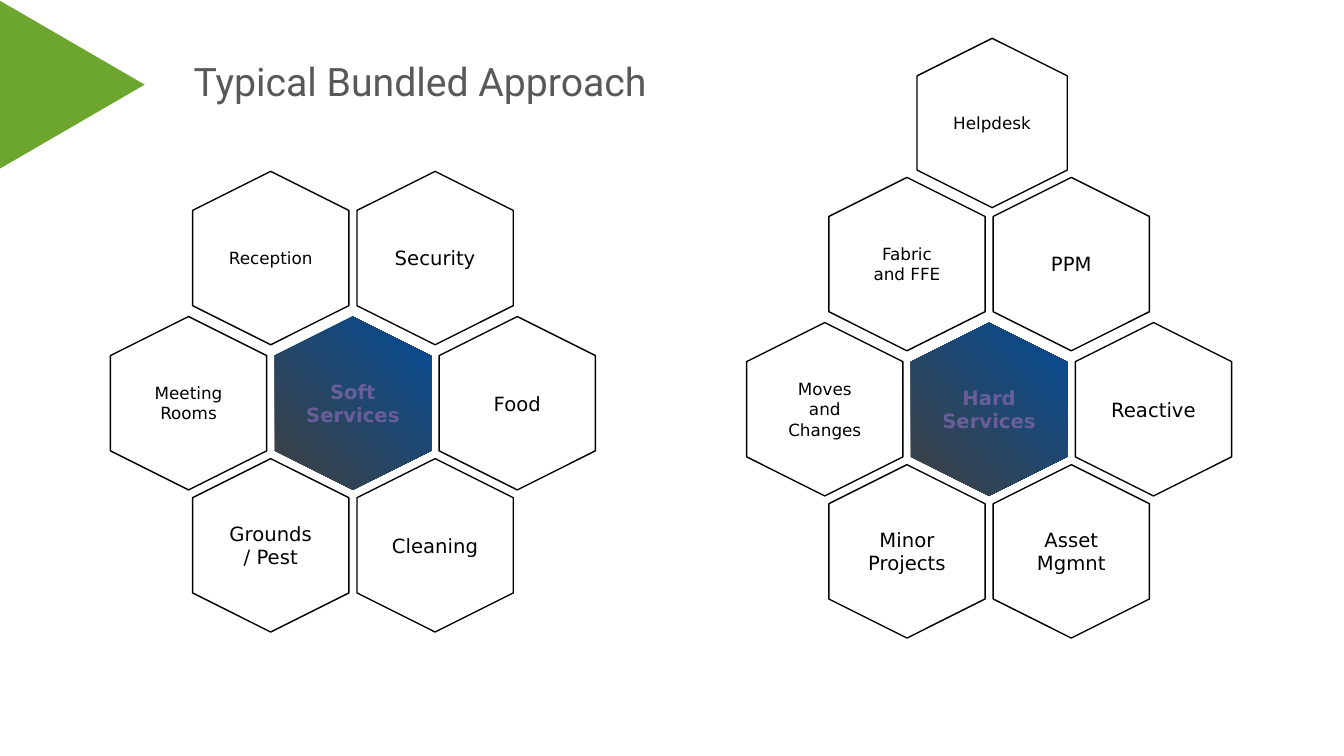
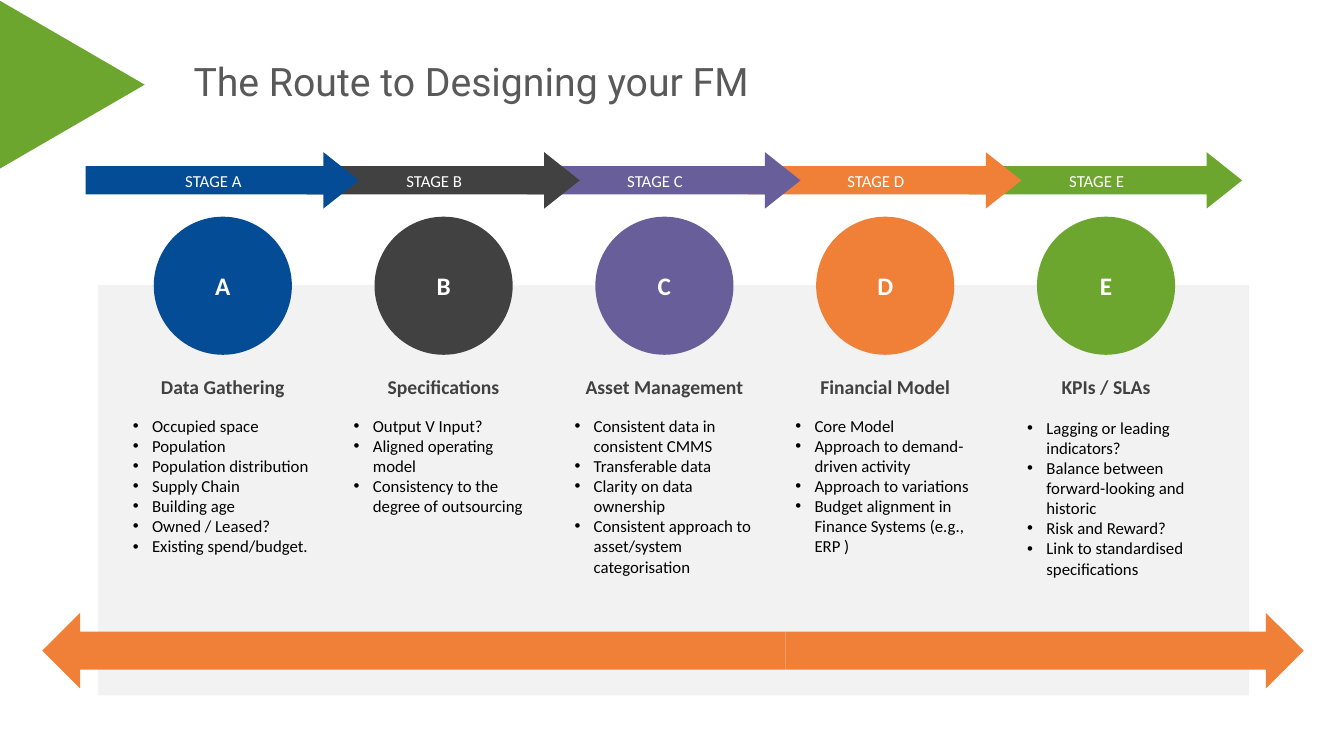
from lxml.etree import SubElement
from pptx import Presentation
from pptx.dml.color import RGBColor
from pptx.enum.shapes import MSO_SHAPE
from pptx.enum.text import MSO_ANCHOR, PP_ALIGN
from pptx.oxml.ns import qn
from pptx.util import Inches, Pt

BLUE, DARK, PURPLE, ORANGE, GREEN = "044C95", "404140", "685F9A", "F08038", "6DA62E"
BLACK, WHITE, GREY, PALE = "000000", "FFFFFF", "595959", "F2F2F2"


def rgb(code):
    return RGBColor.from_string(code)


class Deck:
    """Holds the style, the presentation and the current slide."""
    head, body, label = "Roboto", "Calibri", "DejaVu Sans"

    def __init__(self):
        self.prs = Presentation()
        self.prs.slide_width, self.prs.slide_height = Inches(13.33), Inches(7.5)
        self.slide = None

    def page(self, title):
        self.slide = self.prs.slides.add_slide(self.prs.slide_layouts[6])
        mark = self.shape(MSO_SHAPE.ISOSCELES_TRIANGLE, -0.12, 0.12, 1.67, 1.44, GREEN)
        mark.rotation = 90
        box = self.text(title, 1.92, 0.62, 8.68, 0.42, 28, GREY, font=self.head,
                        align=PP_ALIGN.LEFT, inset=(0, 0))
        box.text_frame.paragraphs[0].line_spacing = 0.9

    def shape(self, kind, x, y, w, h, fill=None, line=None):
        item = self.slide.shapes.add_shape(kind, Inches(x), Inches(y), Inches(w), Inches(h))
        item.shadow.inherit = False
        if fill:
            item.fill.solid()
            item.fill.fore_color.rgb = rgb(fill)
        else:
            item.fill.background()
        if line:
            item.line.color.rgb = rgb(line)
            item.line.width = Pt(1)
        else:
            item.line.fill.background()
        return item

    def label_item(self, item, text, size, color, bold=False, font=None,
                   align=PP_ALIGN.CENTER, inset=(0.1, 0.05)):
        """Fill a shape or box with one style of text."""
        frame = item.text_frame
        frame.text = text
        frame.word_wrap = True
        frame.vertical_anchor = MSO_ANCHOR.MIDDLE
        frame.margin_left = frame.margin_right = Inches(inset[0])
        frame.margin_top = frame.margin_bottom = Inches(inset[1])
        for para in frame.paragraphs:
            para.alignment = align
            for run in para.runs:
                run.font.name = font or self.body
                run.font.size = Pt(size)
                run.font.bold = bold
                run.font.color.rgb = rgb(color)

    def text(self, text, x, y, w, h, size, color, **style):
        box = self.slide.shapes.add_textbox(Inches(x), Inches(y), Inches(w), Inches(h))
        self.label_item(box, text, size, color, **style)
        return box

    def points(self, lines, x, y, w, h):
        """Bulleted list."""
        box = self.text("\n".join(lines), x, y, w, h, 12, BLACK, align=PP_ALIGN.LEFT)
        box.text_frame.vertical_anchor = MSO_ANCHOR.TOP
        for para in box.text_frame.paragraphs:
            props = para._p.get_or_add_pPr()
            props.set("marL", str(Inches(0.19)))
            props.set("indent", str(-Inches(0.19)))
            SubElement(props, qn("a:buFont")).set("typeface", "Arial")
            SubElement(props, qn("a:buChar")).set("char", "•")

    def cell(self, text, x, y, size, w=1.72, h=1.55, core=False):
        """Upright hexagon centred on x, y; a core has a gradient fill."""
        item = self.shape(MSO_SHAPE.HEXAGON, x - w / 2, y - h / 2, w, h,
                          line=None if core else BLACK)
        if core:
            item.fill.gradient()
            item.fill.gradient_angle = 315
            for stop, color, place in zip(item.fill.gradient_stops, (DARK, BLUE), (0, 0.99)):
                stop.color.rgb = rgb(color)
                stop.position = place
        item.rotation = 270 if core else 90
        self.label_item(item, text, size, PURPLE if core else BLACK, bold=core,
                        font=self.label, inset=(0, 0.04) if core else (0.1, 0.1))
        item.element.txBody.bodyPr.set("vert", "vert" if core else "vert270")

    def comb(self, name, x, y, cells):
        """Core hexagon with six around it, row by row."""
        pitch = 1.63
        spots = [(-0.5, -1.44), (0.5, -1.44), (-1, 0), (1, 0), (-0.5, 1.41), (0.5, 1.41)]
        self.cell(name, x, y, 14, core=True)
        for (col, drop), (text, size) in zip(spots, cells):
            self.cell(text, x + col * pitch, y + drop, size)


SOFT = [("Reception", 12), ("Security", 14), ("Meeting Rooms", 12),
        ("Food", 14), ("Grounds / Pest", 14), ("Cleaning", 14)]
HARD = [("Fabric and FFE", 12), ("PPM", 14), ("Moves and Changes", 12),
        ("Reactive", 14), ("Minor Projects", 14), ("Asset Mgmnt", 14)]
STAGES = [
    ("A", BLUE, "Data Gathering",
     ["Occupied space", "Population", "Population distribution", "Supply Chain",
      "Building age", "Owned / Leased?", "Existing spend/budget."]),
    ("B", DARK, "Specifications",
     ["Output V Input?", "Aligned operating model",
      "Consistency to the degree of outsourcing"]),
    ("C", PURPLE, "Asset Management",
     ["Consistent data in consistent CMMS", "Transferable data",
      "Clarity on data ownership",
      "Consistent approach to asset/system categorisation"]),
    ("D", ORANGE, "Financial Model",
     ["Core Model", "Approach to demand-driven activity", "Approach to variations",
      "Budget alignment in Finance Systems (e.g., ERP )"]),
    ("E", GREEN, "KPIs / SLAs",
     ["Lagging or leading indicators?",
      "Balance between forward-looking and historic", "Risk and Reward?",
      "Link to standardised specifications"]),
]


def bundles(deck):
    deck.page("Typical Bundled Approach")
    deck.comb("Soft Services", 3.5, 4, SOFT)
    deck.comb("Hard Services", 9.81, 4.06, HARD)
    deck.cell("Helpdesk", 9.84, 1.22, 12, 1.68, 1.49)


def route(deck):
    deck.page("The Route to Designing your FM")
    deck.shape(MSO_SHAPE.RECTANGLE, 0.97, 2.83, 11.42, 4.07, PALE)
    last = len(STAGES) - 1
    # Right to left, so each arrow head covers the next tail
    for i in range(last, -1, -1):
        key, color, name, lines = STAGES[i]
        mid = 2.21 + 2.19 * i
        arrow = deck.shape(MSO_SHAPE.RIGHT_ARROW, mid - 1.36, 1.51, 2.71, 0.56, color)
        arrow.adjustments[1] = 0.63
        deck.label_item(arrow, f"STAGE {key}", 12, WHITE)
        disc = deck.shape(MSO_SHAPE.OVAL, mid - 1.37 / 2, 2.15, 1.37, 1.37, color)
        deck.label_item(disc, key, 18, WHITE, bold=True)
        deck.text(name, mid - 1.15, 3.67, 2.3, 0.34, 14, DARK, bold=True)
        dx, dy = (0.11, 0.02) if i == last else (0, 0)
        deck.points(lines, mid - 0.99 + dx, 4.07 + dy, 2, 1.92)
    deck.shape(MSO_SHAPE.LEFT_ARROW, 0.42, 6.08, 7.37, 0.75, ORANGE)
    deck.shape(MSO_SHAPE.RIGHT_ARROW, 7.79, 6.08, 5.14, 0.75, ORANGE)


def main():
    deck = Deck()
    bundles(deck)
    route(deck)
    deck.prs.save("out.pptx")


if __name__ == "__main__":
    main()
